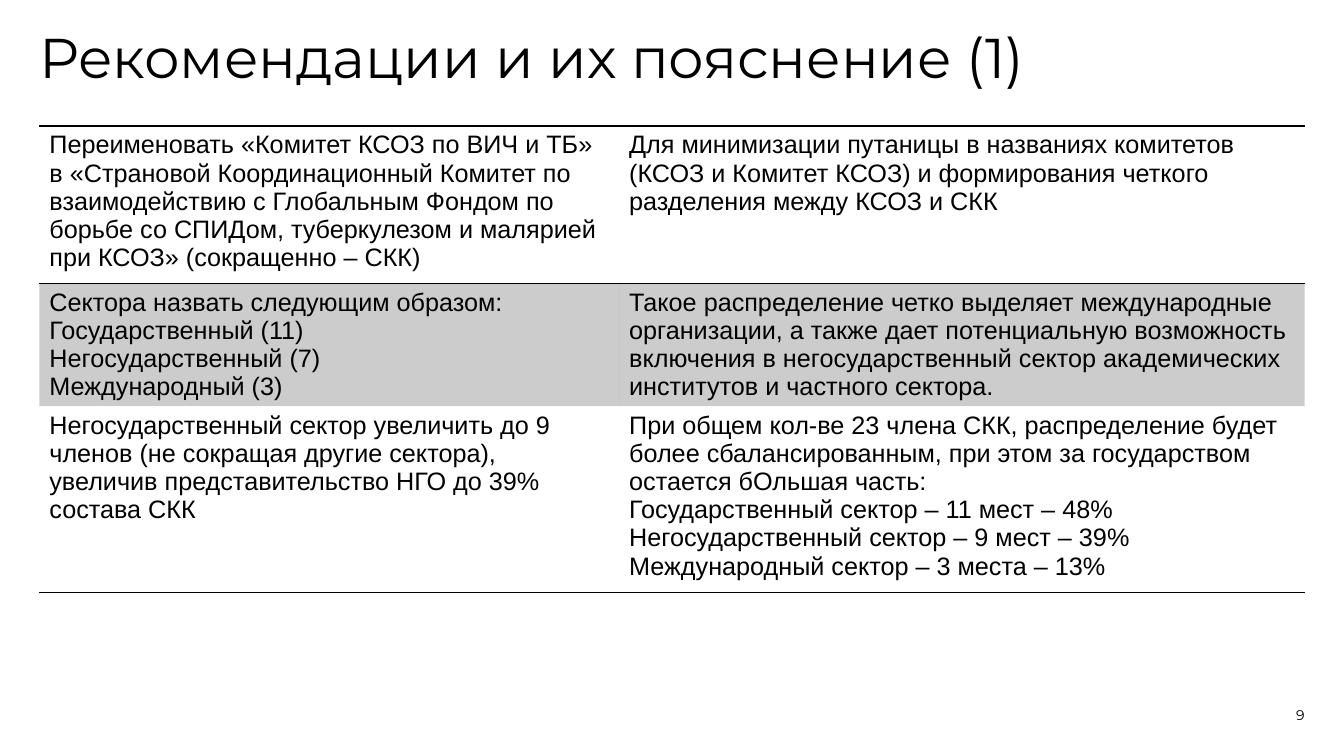
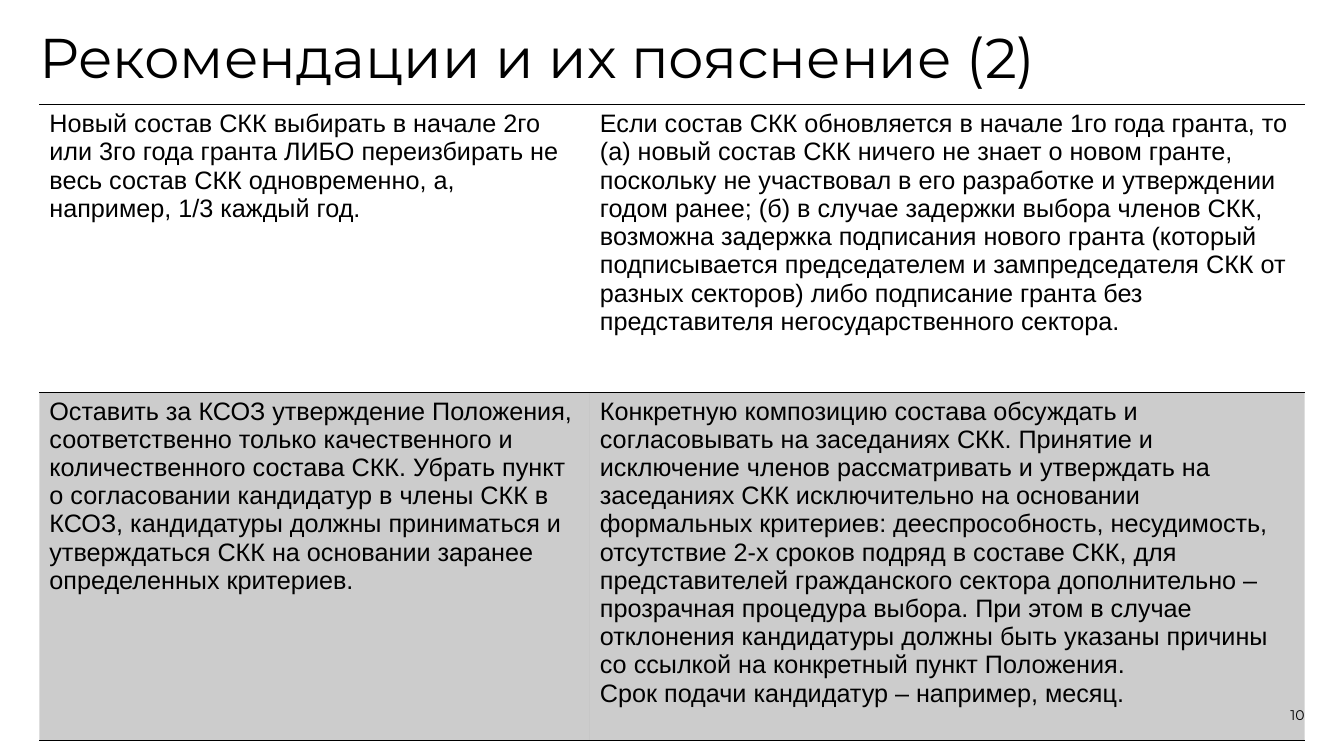
from lxml.etree import SubElement
from pptx import Presentation
from pptx.dml.color import RGBColor
from pptx.enum.text import MSO_ANCHOR, MSO_AUTO_SIZE, PP_ALIGN
from pptx.oxml import parse_xml
from pptx.oxml.ns import nsdecls, qn
from pptx.util import Inches, Pt

COLORS = {"text": "000000", "band": "000000", "rule": "000000"}
TITLE_FONT, BODY_FONT = "Montserrat", "Arial"
LEFT, WIDTH = 0.39, 12.55
BAND_OPACITY = 20  # percent
NO_STYLE = "{2D5ABB26-0587-4C30-8999-92F81FD0307C}"

# Each cell is a list of paragraphs
SLIDES = [
    {
        "title": "Рекомендации и их пояснение (1)", "title_height": 0.54, "number": 9,
        "top": 1.25, "cols": [5.75, 6.8], "heights": [1.56, 1.22, 1.85],
        "rows": [
            [["Переименовать «Комитет КСОЗ по ВИЧ и ТБ» в «Страновой Координационный Комитет "
              "по взаимодействию с Глобальным Фондом по борьбе со СПИДом, туберкулезом и "
              "малярией при КСОЗ» (сокращенно – СКК)"],
             ["Для минимизации путаницы в названиях комитетов (КСОЗ и Комитет КСОЗ) и "
              "формирования четкого разделения между КСОЗ и СКК"]],
            [["Сектора назвать следующим образом:",
              "Государственный (11)",
              "Негосударственный (7)",
              "Международный (3)"],
             ["Такое распределение четко выделяет международные организации, а также дает "
              "потенциальную возможность включения в негосударственный сектор академических "
              "институтов и частного сектора."]],
            [["Негосударственный сектор увеличить до 9 членов (не сокращая другие сектора), "
              "увеличив представительство НГО до 39% состава СКК"],
             ["При общем кол-ве 23 члена СКК, распределение будет более сбалансированным, "
              "при этом за государством остается бОльшая часть:",
              "Государственный сектор – 11 мест – 48%",
              "Негосударственный сектор – 9 мест – 39%",
              "Международный сектор – 3 места – 13%"]],
        ],
    },
    {
        "title": "Рекомендации и их пояснение (2)", "title_height": 0.74, "number": 10,
        "top": 1.04, "cols": [5.46, 7.09], "heights": [2.85, 3.46],
        "rows": [
            [["Новый состав СКК выбирать в начале 2го или 3го года гранта ЛИБО переизбирать "
              "не весь состав СКК одновременно, а, например, 1/3 каждый год."],
             ["Если состав СКК обновляется в начале 1го года гранта, то (а) новый состав СКК "
              "ничего не знает о новом гранте, поскольку не участвовал в его разработке и "
              "утверждении годом ранее; (б) в случае задержки выбора членов СКК, возможна "
              "задержка подписания нового гранта (который подписывается председателем и "
              "зампредседателя СКК от разных секторов) либо подписание гранта без "
              "представителя негосударственного сектора."]],
            [["Оставить за КСОЗ утверждение Положения, соответственно только качественного и "
              "количественного состава СКК. Убрать пункт о согласовании кандидатур в члены "
              "СКК в КСОЗ, кандидатуры должны приниматься и утверждаться СКК на основании "
              "заранее определенных критериев."],
             ["Конкретную композицию состава обсуждать и согласовывать на заседаниях СКК. "
              "Принятие и исключение членов рассматривать и утверждать на заседаниях СКК "
              "исключительно на основании формальных критериев: дееспрособность, "
              "несудимость, отсутствие 2-х сроков подряд в составе СКК, для представителей "
              "гражданского сектора дополнительно – прозрачная процедура выбора. При этом в "
              "случае отклонения кандидатуры должны быть указаны причины со ссылкой на "
              "конкретный пункт Положения.",
              "Срок подачи кандидатур – например, месяц."]],
        ],
    },
]


def write(tf, paragraphs, font, size, align=PP_ALIGN.LEFT):
    """Fill a text frame with paragraphs of one format."""
    for i, text in enumerate(paragraphs):
        p = tf.add_paragraph() if i else tf.paragraphs[0]
        p.text = text
        p.alignment = align
        p.font.name = font
        p.font.size = Pt(size)
        p.font.color.rgb = RGBColor.from_string(COLORS["text"])


def frame(tf, anchor):
    """Give a text frame no insets and a fixed size."""
    tf.margin_left = tf.margin_top = tf.margin_right = tf.margin_bottom = 0
    tf.word_wrap = True
    tf.auto_size = MSO_AUTO_SIZE.NONE
    tf.vertical_anchor = anchor


def add_title(s, text, height):
    sp = s.shapes.title
    sp.left, sp.top, sp.width, sp.height = (Inches(v) for v in (LEFT, 0.3, WIDTH, height))
    frame(sp.text_frame, MSO_ANCHOR.TOP)
    write(sp.text_frame, [text], TITLE_FONT, 40)
    sp.text_frame.paragraphs[0].line_spacing = 0.9


def add_number(s, number):
    width = 0.98
    sp = s.shapes.add_textbox(Inches(LEFT + WIDTH - width), Inches(6.78),
                              Inches(width), Inches(0.4))
    frame(sp.text_frame, MSO_ANCHOR.BOTTOM)
    write(sp.text_frame, [str(number)], TITLE_FONT, 10, PP_ALIGN.RIGHT)


def set_borders(cell, ruled):
    """Draw a 1 pt rule on the named sides and clear the others."""
    tc_pr = cell._tc.get_or_add_tcPr()
    for i, side in enumerate("LRTB"):
        line = (f'<a:solidFill><a:srgbClr val="{COLORS["rule"]}"/></a:solidFill>'
                if side in ruled else "<a:noFill/>")
        tc_pr.insert(i, parse_xml(f'<a:ln{side} {nsdecls("a")} w="12700">{line}</a:ln{side}>'))


def set_fill(cell, banded):
    if not banded:
        cell.fill.background()
        return
    cell.fill.solid()
    cell.fill.fore_color.rgb = RGBColor.from_string(COLORS["band"])
    color = cell._tc.tcPr.find(qn("a:solidFill")).find(qn("a:srgbClr"))
    SubElement(color, qn("a:alpha")).set("val", str(BAND_OPACITY * 1000))


def add_recommendations(s, top, cols, heights, rows):
    """Table with banded even rows, ruled around the first row and below the last."""
    table = s.shapes.add_table(len(rows), len(cols), Inches(LEFT), Inches(top),
                               Inches(WIDTH), Inches(sum(heights))).table
    table.first_row = table.horz_banding = False
    table._tbl.tblPr.find(qn("a:tableStyleId")).text = NO_STYLE
    for column, width in zip(table.columns, cols):
        column.width = Inches(width)
    for i, (height, row) in enumerate(zip(heights, rows)):
        table.rows[i].height = Inches(height)
        ruled = ("T" if i < 2 else "") + ("B" if i in (0, len(rows) - 1) else "")
        for j, paragraphs in enumerate(row):
            cell = table.cell(i, j)
            write(cell.text_frame, paragraphs, BODY_FONT, 18)
            set_fill(cell, i % 2 == 1)
            set_borders(cell, ruled)


def main():
    prs = Presentation()
    prs.slide_width, prs.slide_height = Inches(13.33), Inches(7.5)
    for page in SLIDES:
        s = prs.slides.add_slide(prs.slide_layouts[5])
        add_title(s, page["title"], page["title_height"])
        add_number(s, page["number"])
        add_recommendations(s, page["top"], page["cols"], page["heights"], page["rows"])
    prs.save("out.pptx")


if __name__ == "__main__":
    main()
